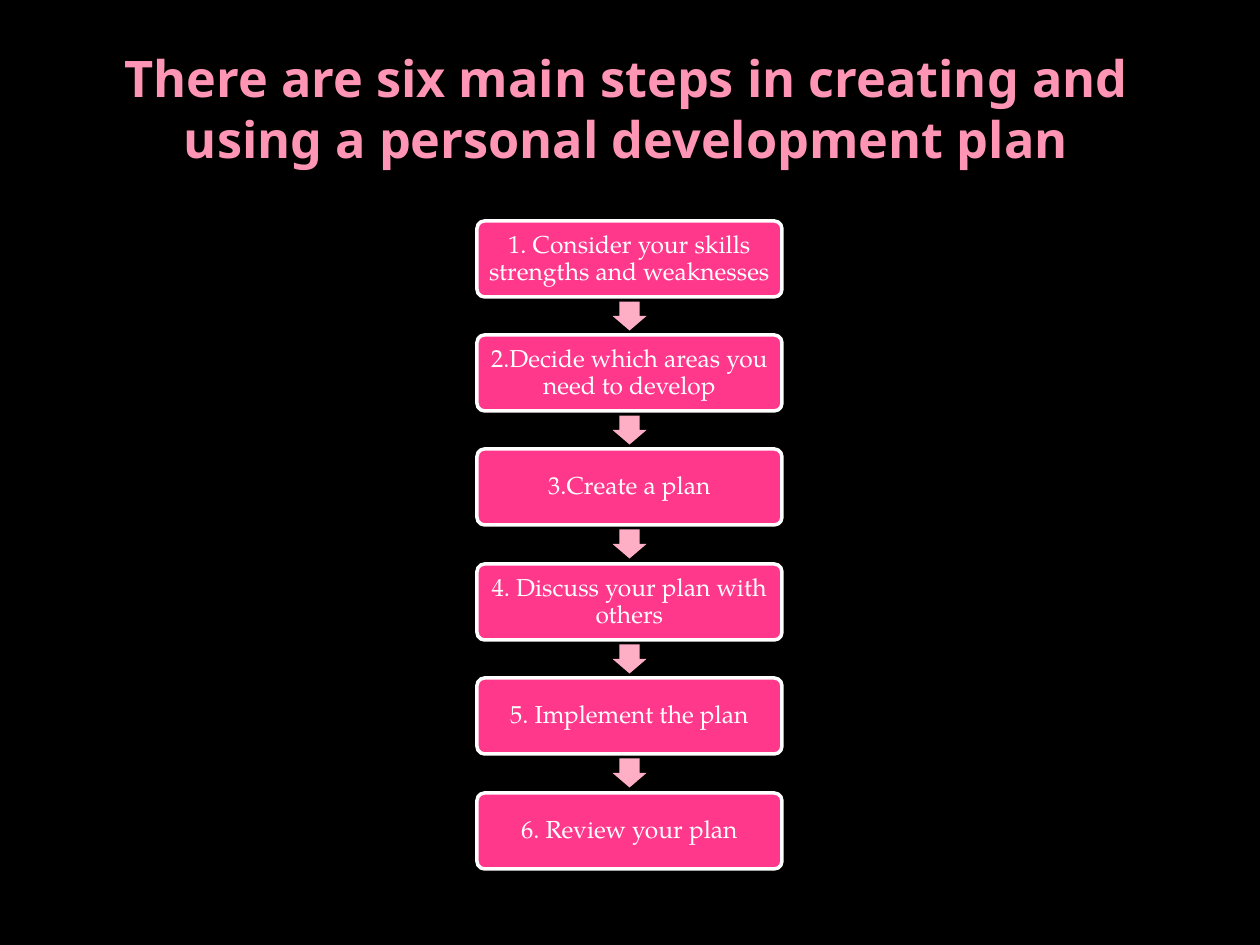
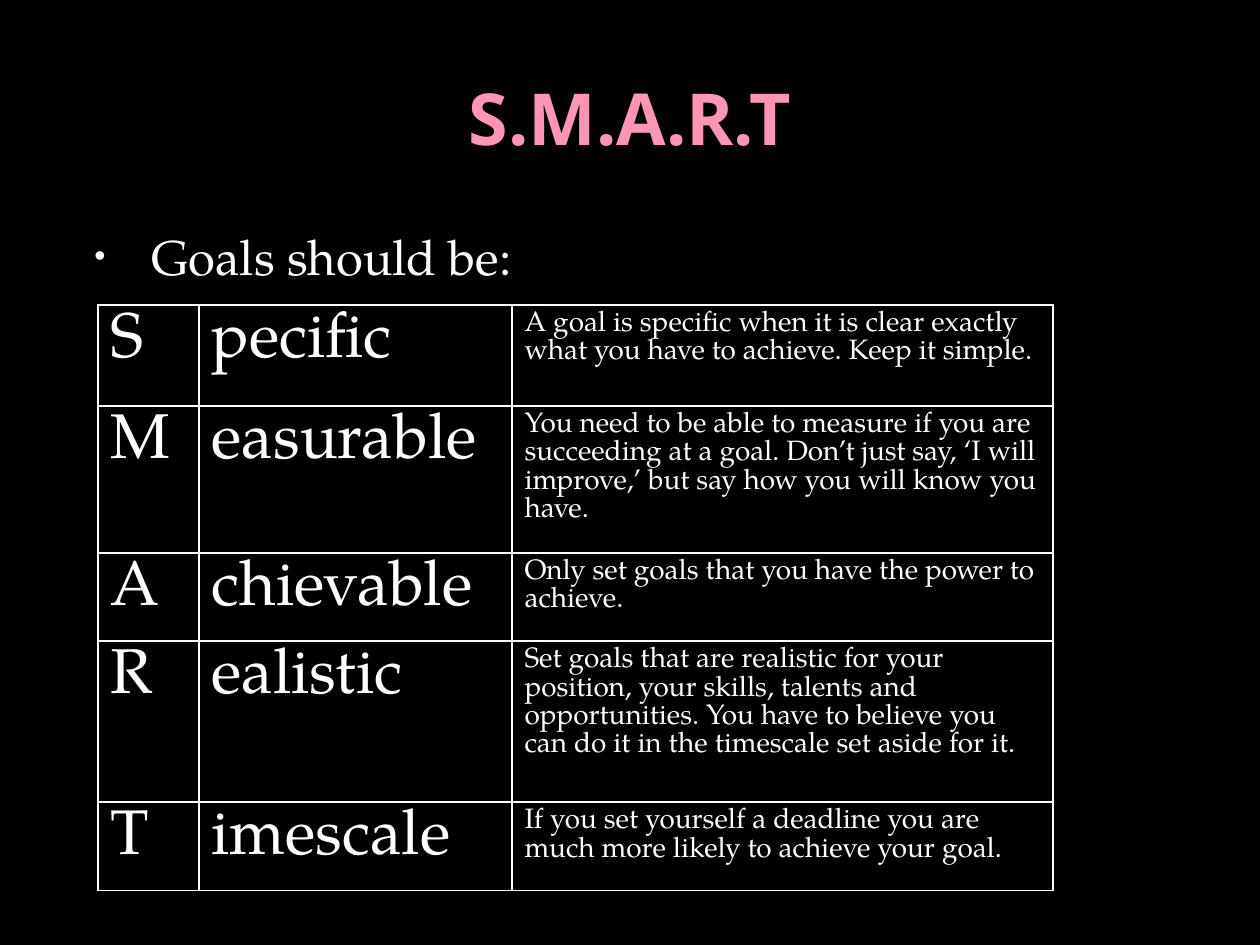
"""Build two slides on personal development plans and SMART goals."""
from lxml.etree import SubElement as Sub
from pptx import Presentation
from pptx.dml.color import RGBColor as RGB
from pptx.enum.shapes import MSO_SHAPE as Shape
from pptx.enum.text import MSO_ANCHOR as Anchor, PP_ALIGN as Align
from pptx.oxml import parse_xml
from pptx.oxml.ns import nsdecls, qn
from pptx.util import Emu, Pt

BLACK = RGB(0, 0, 0)
WHITE = RGB(255, 255, 255)
PINK = RGB(0xFF, 0x95, 0xB5)
ROSE = RGB(0xFF, 0x38, 0x8C)
BLUSH = RGB(0xFF, 0xAF, 0xC5)
HEAD, BODY = "Noto Sans", "TeX Gyre Pagella"
SCALE = 914400 / 126


def px(*nums):
    return [Emu(round(n * SCALE)) for n in nums]


def write(frame, text, size, color=WHITE, name=BODY, align=Align.LEFT):
    frame.word_wrap = True
    para = frame.paragraphs[0]
    para.text = text
    para.alignment = align
    font = para.font
    font.name, font.size, font.color.rgb = name, Pt(size), color
    return para


deck = Presentation()
deck.slide_width, deck.slide_height = px(1260, 945)

titles = [
    ("There are six main steps in creating and using a personal development plan",
     59, 29, 28.8),
    ("S.M.A.R.T", 63, 38, 41),
]
slides = []
for text, left, top, size in titles:
    slide = deck.slides.add_slide(deck.slide_layouts[6])
    slide.background.fill.solid()
    slide.background.fill.fore_color.rgb = BLACK
    box = slide.shapes.add_textbox(*px(left, top, 1134, 158))
    box.text_frame.vertical_anchor = Anchor.MIDDLE
    para = write(box.text_frame, text, size, PINK, HEAD, Align.CENTER)
    para.font.bold = True
    slides.append(slide)
flow, smart = slides

steps = [
    "1. Consider your skills strengths and weaknesses",
    "2.Decide which areas you need to develop",
    "3.Create a plan",
    "4. Discuss your plan with others",
    "5. Implement the plan",
    "6. Review your plan",
]
for i, text in enumerate(steps):
    top = 221 + i * 572 // 5
    step = flow.shapes.add_shape(Shape.ROUNDED_RECTANGLE, *px(477, top, 305, 76))
    step.adjustments[0] = 0.1
    step.shadow.inherit = False
    step.fill.solid()
    step.fill.fore_color.rgb = ROSE
    step.line.color.rgb = WHITE
    step.line.width = Pt(2)
    frame = step.text_frame
    frame.vertical_anchor = Anchor.MIDDLE
    frame.margin_left, frame.margin_right, frame.margin_top, frame.margin_bottom = px(7, 7, 7, 7)
    para = write(frame, text, 14, align=Align.CENTER)
    para.line_spacing = 0.9
    if i < len(steps) - 1:
        arrow = flow.shapes.add_shape(Shape.RIGHT_ARROW, *px(615, top + 78, 29, 34))
        arrow.rotation = 90
        arrow.adjustments[0] = 0.6
        arrow.adjustments[1] = 0.5
        arrow.shadow.inherit = False
        arrow.fill.solid()
        arrow.fill.fore_color.rgb = BLUSH
        arrow.line.fill.background()

intro = smart.shapes.add_textbox(*px(63, 220, 1134, 649))
para = write(intro.text_frame, "Goals should be:", 28)
para.space_before = Pt(5.6)
props = para._p.get_or_add_pPr()
inset, hang = px(76, -57)
props.set("marL", str(inset))
props.set("indent", str(hang))
base = props.find(qn("a:defRPr"))
for mark in ('<a:buClr {}><a:srgbClr val="F9F9F9"/></a:buClr>',
             '<a:buSzPct {} val="65000"/>',
             '<a:buFont {} typeface="Arial"/>',
             '<a:buChar {} char="•"/>'):
    base.addprevious(parse_xml(mark.format(nsdecls("a"))))

goals = [
    ("S", "pecific", "A goal is specific when it is clear exactly what you have to "
     "achieve. Keep it simple."),
    ("M", "easurable", "You need to be able to measure if you are succeeding at a goal. "
     "Don’t just say, ‘I will improve,’ but say how you will know you have."),
    ("A", "chievable", "Only set goals that you have the power to achieve."),
    ("R", "ealistic", "Set goals that are realistic for your position, your skills, "
     "talents and opportunities. You have to believe you can do it in the timescale "
     "set aside for it."),
    ("T", "imescale", "If you set yourself a deadline you are much more likely to "
     "achieve your goal."),
]
wides = px(101, 313, 541)
highs = px(101, 136, 82, 161, 82)
grid = smart.shapes.add_table(5, 3, *px(98, 305), sum(wides), sum(highs)).table
grid.first_row = grid.horz_banding = False
for col, wide in zip(grid.columns, wides):
    col.width = wide
for row, high, goal in zip(grid.rows, highs, goals):
    row.height = high
    for cell, text, size in zip(row.cells, goal, (36, 36, 16)):
        write(cell.text_frame, text, size)
        props = cell._tc.get_or_add_tcPr()
        for side in ("lnL", "lnR", "lnT", "lnB"):
            line = Sub(props, qn("a:" + side), w=str(Pt(1)))
            Sub(Sub(line, qn("a:solidFill")), qn("a:srgbClr"), val=str(WHITE))
        cell.fill.background()

deck.save("out.pptx")
